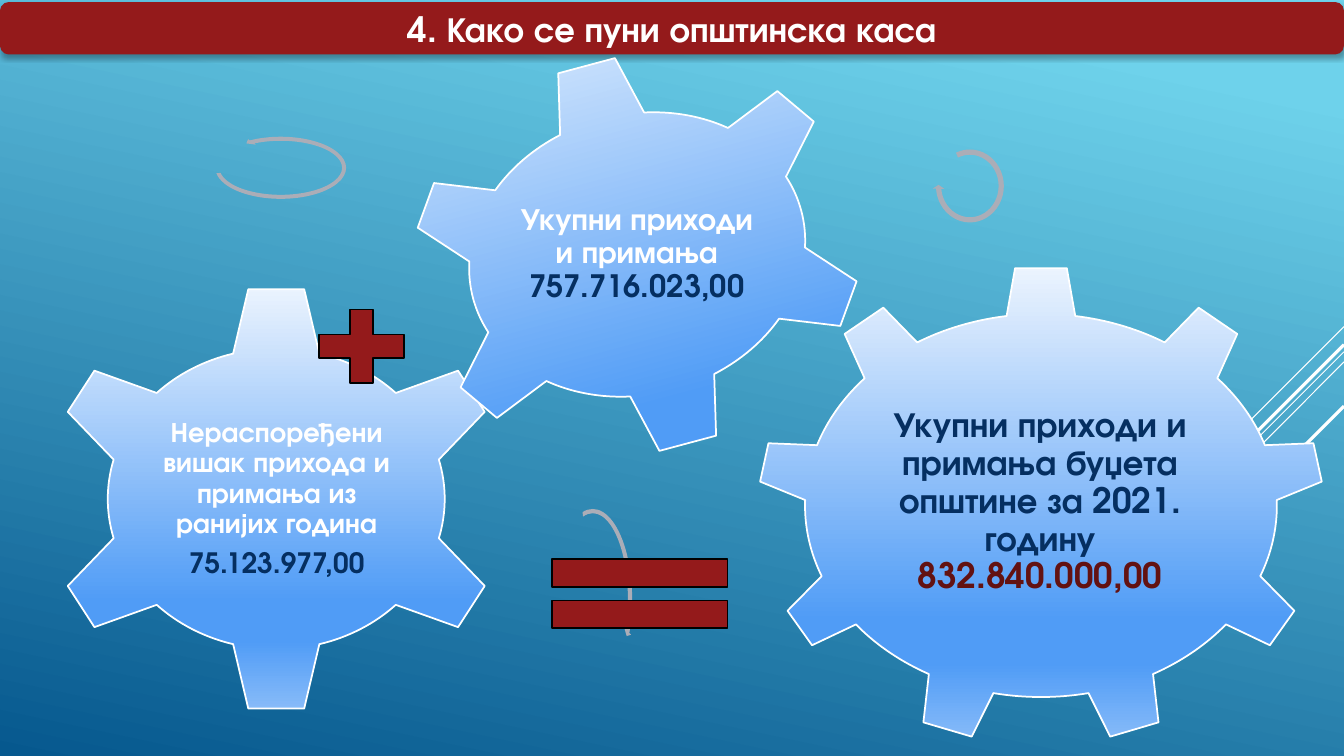
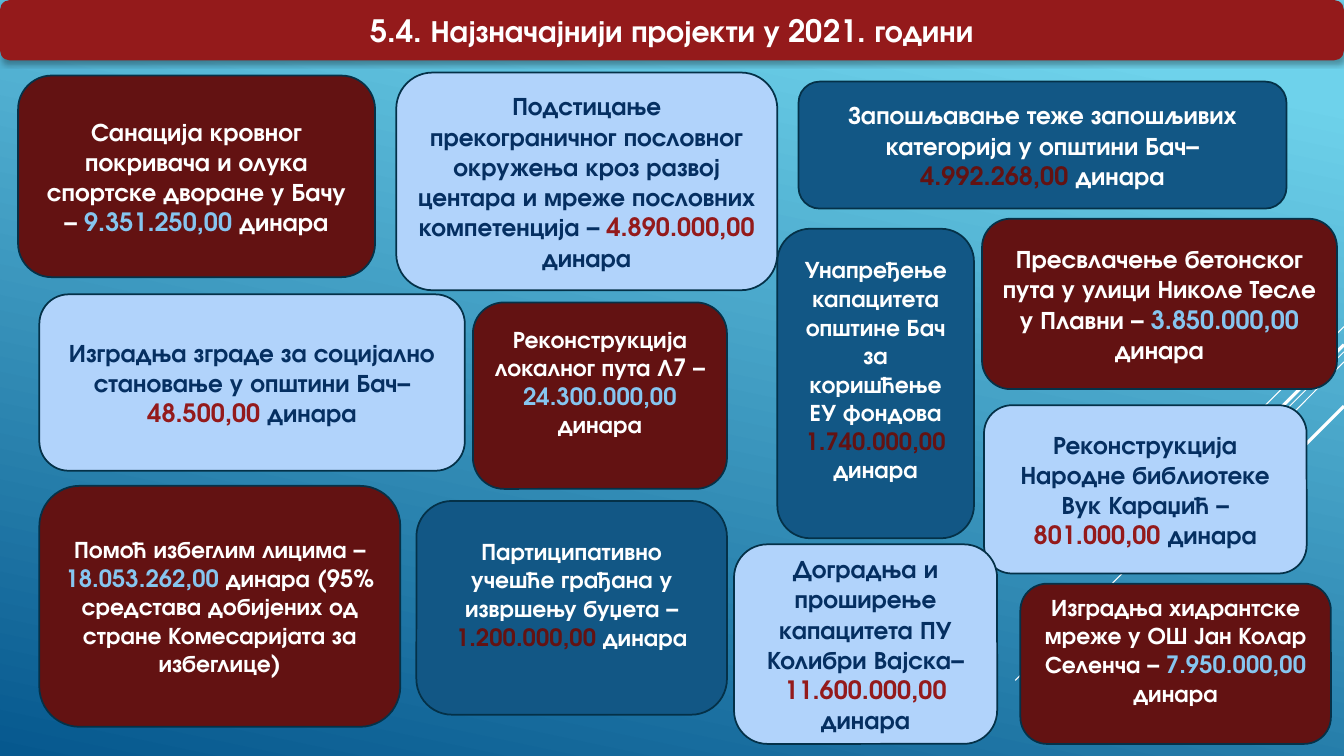
"""Build two slides on municipal budget revenue and key projects."""
from copy import deepcopy

from lxml import etree
from pptx import Presentation
from pptx.dml.color import RGBColor
from pptx.enum.shapes import MSO_CONNECTOR, MSO_SHAPE
from pptx.enum.text import MSO_ANCHOR, PP_ALIGN
from pptx.oxml.ns import qn
from pptx.util import Inches, Pt

ROUND = MSO_SHAPE.ROUNDED_RECTANGLE
GEAR6, GEAR9 = MSO_SHAPE.GEAR_6, MSO_SHAPE.GEAR_9
ARC, LEFT_ARC = MSO_SHAPE.CIRCULAR_ARROW, MSO_SHAPE.LEFT_CIRCULAR_ARROW
PLUS, EQUAL = MSO_SHAPE.MATH_PLUS, MSO_SHAPE.MATH_EQUAL
LINE, CENTER, MIDDLE = MSO_CONNECTOR.STRAIGHT, PP_ALIGN.CENTER, MSO_ANCHOR.MIDDLE

FONT = "TeX Gyre Adventor"
WIDE, HIGH = 13.33, 7.5
COLORS = {
    "white": "FFFFFF", "black": "000000", "red": "941A1B", "wine": "631212",
    "navy": "052F61", "blue": "125785", "pale": "B1D3FB", "sky": "86C5EF",
    "edge": "043148", "gray": "ABADB7", "top": "6ED2EB", "deep": "06588E",
    "mist": "ECF4FE", "azure": "509CF6", "haze": "8BBDF9",
}
BACK = [(0.1, "top"), (1, "deep")]
METAL = [(0, "mist"), (0.74, "azure"), (0.83, "azure"), (1, "haze")]
RAYS = [
    (3.24, 12.33, 4.24, 0.75), (3.49, 10.07, 6.75, 0.75),
    (3.59, 11.26, 5.67, 0.75), (3.42, 11.42, 5.33, 2.25),
    (4.03, 11.94, 5.42, 2.25),
]

GEARS = [
    (GEAR9, (7.51, 2.64, 5.63, 4.75), 0, (8.57, 3.76, 3.49, 2.44), 25,
     [[("Укупни приходи и примања буџета општине за 2021. годину ", "navy"),
       ("832.840.000,00", "wine")]]),
    (GEAR6, (0.43, 2.82, 4.62, 4.26), 0, (1.56, 3.9, 2.37, 2.1), 20,
     [[("Нераспоређени вишак прихода и примања из ранијих година", "white")],
      [("75.123.977,00", "navy")]]),
    (GEAR6, (4.04, 0.54, 4.56, 3.97), 345, (5.07, 1.37, 2.49, 2.3), 22,
     [[("Укупни приходи и примања ", "white"), ("757.716.023,00", "navy")]]),
]
ARCS = [
    (ARC, (5.46, 5.02, 0.84, 1.85), (0.05, 2.99, 25.46, 157.98, 0.06)),
    (ARC, (9.25, 1.45, 0.74, 0.79), (0.07, 4.3, 104.89, 148.38, 0.08)),
    (LEFT_ARC, (2.11, 1.33, 1.35, 0.67), (0.06, 3.94, 133.14, 105.08, 0.07)),
]
SIGNS = [(PLUS, (3.01, 2.94, 1.15, 0.99)), (EQUAL, (5.16, 5.31, 2.37, 1.16))]

THEMES = {
    "wine": ("white", "sky"),
    "pale": ("navy", "red"),
    "blue": ("white", "wine"),
}
UNIT = "динара"
LIFT = 0.33
CARDS = [
    ("wine", (0.18, 0.75, 3.54, 2), 18, 0.05,
     "Санација кровног покривача и олука спортске дворане у Бачу – ",
     "9.351.250,00 ", UNIT),
    ("pale", (3.93, 0.72, 3.78, 2.16), 18, 0.05,
     "Подстицање прекограничног пословног окружења кроз развој центара "
     "и мреже пословних компетенција – ", "4.890.000,00 ", UNIT),
    ("wine", (0.39, 4.82, 3.58, 2.39), 17, 0.05,
     "Помоћ избеглим лицима – ", "18.053.262,00 ",
     "динара (95% средстава добијених од стране Комесаријата за избеглице)"),
    ("blue", (7.92, 0.81, 4.84, 1.26), 18, 0.05,
     "Запошљавање теже запошљивих категорија у општини Бач– ",
     "4.992.268,00 ", UNIT),
    ("pale", (0.39, 2.92, 4.22, 1.75), 18, 0.05,
     "Изградња зграде за социјално становање у општини Бач– ",
     "48.500,00 ", UNIT),
    ("wine", (9.74, 2.17, 3.52, 1.69), 18, 0.05,
     "Пресвлачење бетонског пута у улици Николе Тесле у Плавни – ",
     "3.850.000,00 ", UNIT),
    ("wine", (4.69, 3, 2.52, 1.85), 17, LIFT,
     "Реконструкција локалног пута Л7 – ", "24.300.000,00 ", UNIT),
    ("pale", (9.76, 4.02, 3.2, 1.67), 18, 0.05,
     "Реконструкција Народне библиотеке Вук Караџић – ",
     "801.000,00 ", UNIT),
    ("blue", (4.13, 4.97, 3.08, 2.12), 17, LIFT,
     "Партиципативно учешће грађана у извршењу буџета – ",
     "1.200.000,00 ", UNIT),
    ("blue", (7.71, 2.27, 1.95, 3.07), 17, LIFT,
     "Унапређење капацитета општине Бач за коришћење ЕУ фондова ",
     "1.740.000,00 ", UNIT),
    ("pale", (7.28, 5.4, 2.61, 1.98), 18, 0.05,
     "Доградња и проширење капацитета ПУ Колибри Вајска– ",
     "11.600.000,00 ", UNIT),
    ("wine", (10.12, 5.79, 3.08, 1.59), 17, LIFT,
     "Изградња хидрантске мреже у ОШ Јан Колар Селенча – ",
     "7.950.000,00 ", UNIT),
]


def tint(name):
    return RGBColor.from_string(COLORS[name])


def assign(item, values):
    for key, value in values.items():
        setattr(item, key, value)


def shade(fill, stops, angle):
    for stop, (place, name) in zip(fill.gradient_stops, stops):
        stop.position = place
        stop.color.rgb = tint(name)
    fill.gradient_angle = 360 - angle


def add_shape(slide, kind, box, fill=None, edge=None):
    shape = slide.shapes.add_shape(kind, *map(Inches, box))
    shape.shadow.inherit = False
    if fill:
        shape.fill.solid()
        shape.fill.fore_color.rgb = tint(fill)
    if edge:
        shape.line.color.rgb = tint(edge)
        shape.line.width = Pt(1.25)
    else:
        shape.line.fill.background()
    return shape


def write(shape, paras, size, frame=None, layout=None):
    text = shape.text_frame
    assign(text, {"word_wrap": True, "vertical_anchor": MIDDLE, **(frame or {})})
    for index, runs in enumerate(paras):
        para = text.add_paragraph() if index else text.paragraphs[0]
        assign(para, {"alignment": CENTER, **(layout or {})})
        for words, name in runs:
            run = para.add_run()
            run.text = words
            assign(run.font, {"name": FONT, "size": Pt(size), "bold": True})
            run.font.color.rgb = tint(name)


def add_rays(slide):
    for start, left, end, width in RAYS:
        ray = slide.shapes.add_connector(
            LINE, *map(Inches, (WIDE, start, left, end)))
        ray.line.color.rgb = tint("white")
        ray.line.width = Pt(width)
        etree.SubElement(ray.element.find(qn("p:spPr")), qn("a:effectLst"))


def add_title(slide, title, top, height, size):
    band = add_shape(slide, ROUND, (0, top, WIDE, height), "red")
    effects = band.element.find(".//" + qn("a:effectLst"))
    glow = etree.SubElement(
        effects, qn("a:outerShdw"), blurRad=str(Pt(3.5)), dist=str(Pt(2.2)),
        dir="5400000", algn="ctr", rotWithShape="0")
    color = etree.SubElement(glow, qn("a:srgbClr"), val=COLORS["black"])
    etree.SubElement(color, qn("a:alpha"), val="32000")
    write(band, [[(title, "white")]], size)


def add_page(deck, title, top, height, size):
    slide = deck.slides.add_slide(deck.slide_layouts[6])
    add_rays(slide)
    add_title(slide, title, top, height, size)
    return slide


def add_gear(slide, kind, box, turn, area, size, paras):
    gear = add_shape(slide, kind, box, edge="white")
    gear.rotation = turn
    gear.fill.gradient()
    stops = gear.element.find(".//" + qn("a:gsLst"))
    while len(stops) < len(METAL):
        stops.append(deepcopy(stops[0]))
    shade(gear.fill, METAL, 90)
    label = slide.shapes.add_textbox(*map(Inches, area))
    sides = ("left", "right", "top", "bottom")
    write(label, paras, size,
          {f"margin_{side}": Inches(0.03) for side in sides},
          {"line_spacing": 0.9, "space_after": Pt(size * 0.35)})


def add_card(slide, theme, box, size, base, lead, amount, tail):
    ink, accent = THEMES[theme]
    card = add_shape(slide, ROUND, box, theme, "edge")
    write(card, [[(lead, ink), (amount, accent), (tail, ink)]], size,
          {"margin_bottom": Inches(base)})


def main():
    deck = Presentation()
    assign(deck, {"slide_width": Inches(WIDE), "slide_height": Inches(HIGH)})
    fill = deck.slide_master.background.fill
    fill.gradient()
    shade(fill, BACK, 102)

    funds = add_page(deck, "4. Како се пуни општинска каса", 0.02, 0.52, 25)
    for gear in GEARS:
        add_gear(funds, *gear)
    for kind, box, bends in ARCS:
        arc = add_shape(funds, kind, box, "gray")
        for index, bend in enumerate(bends):
            arc.adjustments[index] = bend
    for kind, box in SIGNS:
        add_shape(funds, kind, box, "red", "black")

    works = add_page(
        deck, "5.4. Најзначајнији пројекти у 2021. години", 0, 0.6, 22)
    for card in CARDS:
        add_card(works, *card)
    deck.save("out.pptx")


if __name__ == "__main__":
    main()
